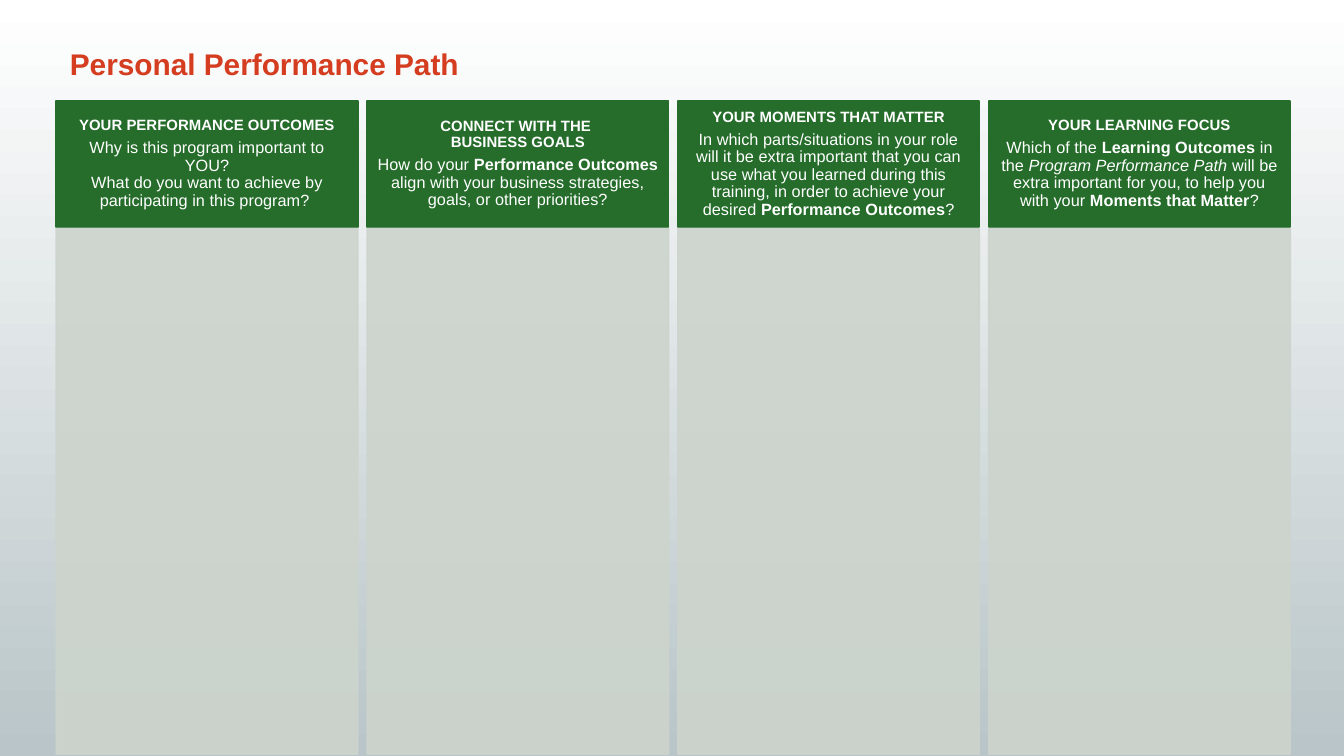
from dataclasses import dataclass

from lxml import etree
from pptx import Presentation
from pptx.dml.color import RGBColor
from pptx.enum.shapes import MSO_SHAPE
from pptx.enum.text import MSO_ANCHOR, MSO_AUTO_SIZE, PP_ALIGN
from pptx.oxml.ns import qn
from pptx.util import Inches, Pt

RECT = MSO_SHAPE.RECTANGLE
TOP, MIDDLE = MSO_ANCHOR.TOP, MSO_ANCHOR.MIDDLE
LEFT, CENTER = PP_ALIGN.LEFT, PP_ALIGN.CENTER

COLORS = {
    "title": "D53D20",
    "header": "266D2B",
    "panel": "CDD4CD",
    "text": "FFFFFF",
    "bg_low": "B9C5C8",
    "bg_high": "FFFFFF",
}
W = 10
H = W * 9 / 16
GRID_LEFT, GRID_RIGHT, GAP = 0.42, 9.6, 0.07
HEADER_TOP, PANEL_TOP, PANEL_BOTTOM = 0.75, 1.7, 5.61


@dataclass
class Span:
    text: str
    bold: bool = False
    italic: bool = False


@dataclass
class Column:
    heading: str
    body: list[Span]


COLUMNS = [
    Column("YOUR PERFORMANCE OUTCOMES", [
        Span("Why is this program important to YOU?\n"
             "What do you want to achieve by participating in this program? "),
    ]),
    Column("CONNECT WITH THE \nBUSINESS GOALS", [
        Span("How do your "),
        Span("Performance Outcomes ", bold=True),
        Span("align with your business strategies, goals, or other priorities?"),
    ]),
    Column("YOUR MOMENTS THAT MATTER", [
        Span("In which parts/situations in your role will it be extra important "
             "that you can use what you learned during this training, "
             "in order to achieve your desired "),
        Span("Performance Outcomes", bold=True),
        Span("?"),
    ]),
    Column("YOUR LEARNING FOCUS", [
        Span("Which of the "),
        Span("Learning Outcomes ", bold=True),
        Span("in the "),
        Span("Program Performance Path ", italic=True),
        Span("will be extra important for you, to help you with your "),
        Span("Moments that Matter", bold=True),
        Span("?"),
    ]),
]
COL_STEP = (GRID_RIGHT - GRID_LEFT + GAP) / len(COLUMNS)
COL_W = COL_STEP - GAP


def rgb(name: str) -> RGBColor:
    return RGBColor.from_string(COLORS[name])


def write(p, text: str, *, size: float, color: str = "text",
          bold: bool = False, italic: bool = False) -> None:
    for i, line in enumerate(text.split("\n")):
        if i:
            p.add_line_break()
        r = p.add_run()
        r.text = line
        r.font.name, r.font.size = "Arial", Pt(size)
        r.font.bold, r.font.italic = bold, italic
        r.font.color.rgb = rgb(color)


def add_block(s, x: float, top: float, bottom: float, color: str,
              opacity: int = 100):
    sp = s.shapes.add_shape(RECT, Inches(x), Inches(top),
                            Inches(COL_W), Inches(bottom - top))
    sp.shadow.inherit = False
    sp.fill.solid()
    sp.fill.fore_color.rgb = rgb(color)
    sp.line.color.rgb = rgb(color)
    sp.line.width = Pt(1)
    if opacity < 100:
        for clr in sp.element.spPr.iter(qn("a:srgbClr")):
            etree.SubElement(clr, qn("a:alpha"), val=str(opacity * 1000))
    return sp


def add_column(s, index: int, column: Column) -> None:
    x = GRID_LEFT + index * COL_STEP
    tf = add_block(s, x, HEADER_TOP, PANEL_TOP - 0.01, "header").text_frame
    tf.word_wrap = True
    tf.vertical_anchor = MIDDLE
    tf.margin_left = tf.margin_right = Inches(0.07)
    tf.margin_top = tf.margin_bottom = Inches(0.04)
    write(tf.paragraphs[0], column.heading, size=8, bold=True)
    p = tf.add_paragraph()
    for span in column.body:
        write(p, span.text, size=8.7, bold=span.bold, italic=span.italic)
    for p in tf.paragraphs:
        p.alignment = CENTER
        p.line_spacing = 0.9
        p.space_after = Pt(3)
    add_block(s, x, PANEL_TOP, PANEL_BOTTOM, "panel", opacity=90)


def add_background(s) -> None:
    fill = s.background.fill
    fill.gradient()
    fill.gradient_angle = 90
    for stop, name, position in zip(fill.gradient_stops,
                                    ("bg_low", "bg_high"), (0, 1)):
        stop.color.rgb = rgb(name)
        stop.position = position


def add_title(s, text: str) -> None:
    sp = s.shapes.title
    sp.left, sp.top = Inches(GRID_LEFT), Inches(0.29)
    sp.width, sp.height = Inches(9.02), Inches(0.39)
    tf = sp.text_frame
    tf.word_wrap = True
    tf.auto_size = MSO_AUTO_SIZE.NONE
    tf.vertical_anchor = TOP
    tf.paragraphs[0].alignment = LEFT
    write(tf.paragraphs[0], text, size=16, color="title", bold=True)


def main() -> None:
    prs = Presentation()
    prs.slide_width, prs.slide_height = Inches(W), Inches(H)
    s = prs.slides.add_slide(prs.slide_layouts[5])
    add_background(s)
    add_title(s, "Personal Performance Path")
    for i, column in enumerate(COLUMNS):
        add_column(s, i, column)
    prs.save("out.pptx")


if __name__ == "__main__":
    main()
